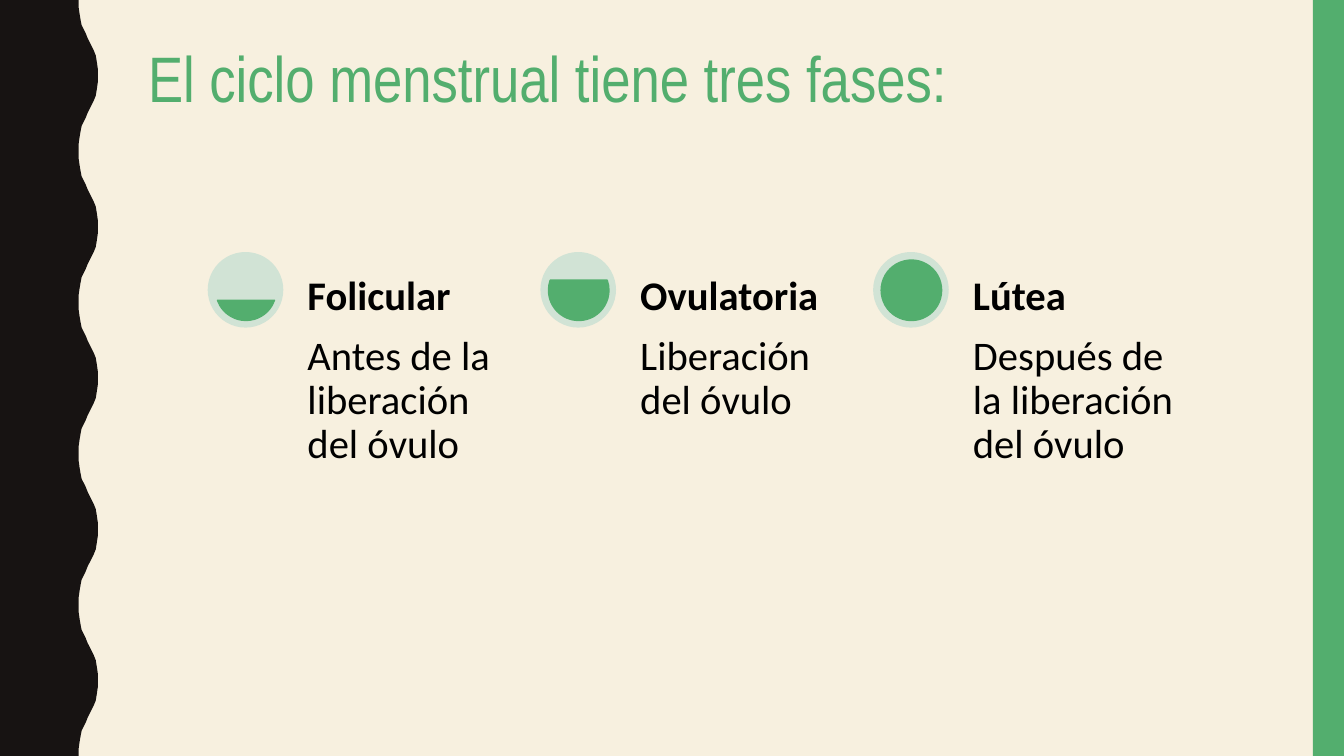
from pptx import Presentation
from pptx.dml.color import RGBColor
from pptx.enum.shapes import MSO_SHAPE as Shape
from pptx.enum.text import MSO_ANCHOR as Anchor
from pptx.util import Inches, Pt

GREEN, PALE, DARK, CREAM = "53AE6E", "D1E3D5", "171312", "F7F0DF"


def paint(item, color):
    item.fill.solid()
    item.fill.fore_color.rgb = RGBColor.from_string(color)
    item.line.fill.background()
    item.shadow.inherit = False


def write(box, text, size, font, color, inset, anchor=Anchor.TOP, bold=False):
    frame = slide.shapes.add_textbox(*map(Inches, box)).text_frame
    frame.word_wrap = True
    frame.vertical_anchor = anchor
    frame.margin_left = frame.margin_right = Inches(inset[0])
    frame.margin_top = frame.margin_bottom = Inches(inset[1])
    para = frame.paragraphs[0]
    para.line_spacing = 0.9
    run = para.add_run()
    run.text = text
    run.font.size = Pt(size)
    run.font.name = font
    run.font.bold = bold
    run.font.color.rgb = RGBColor.from_string(color)


deck = Presentation()
deck.slide_width, deck.slide_height = Inches(13.33), Inches(7.5)
slide = deck.slides.add_slide(deck.slide_layouts[6])
back = slide.background.fill
back.solid()
back.fore_color.rgb = RGBColor.from_string(CREAM)

half = [(0.78, 0), (0.78, 0.07), (0.79, 0.14), (0.8, 0.2), (0.81, 0.25),
        (0.83, 0.29), (0.85, 0.33), (0.87, 0.38), (0.89, 0.42), (0.91, 0.46),
        (0.93, 0.5), (0.95, 0.55), (0.96, 0.61), (0.97, 0.68), (0.97, 0.75)]
wave = half + [(x, 1.5 - y) for x, y in half[-2::-1]]
edge = [(x, y + 1.5 * i) for i in range(5) for x, y in wave]
path = [(Inches(x), Inches(y)) for x, y in edge + [(0, 7.5)]]
build = slide.shapes.build_freeform(0, 0)
build.add_line_segments(path, close=True)
paint(build.convert_to_shape(), DARK)

band = slide.shapes.add_shape(
    Shape.RECTANGLE, Inches(13.02), 0, Inches(0.31), Inches(7.5))
paint(band, GREEN)

write((1.37, 0.42, 11.13, 1.63), "El ciclo menstrual tiene tres fases:",
      45.9, "Arial Narrow", GREEN, (0.1, 0.05))

phases = [
    ("Folicular", "Antes de la liberación del óvulo", (11.68, 96.32)),
    ("Ovulatoria", "Liberación del óvulo", (204.32, 119.68)),
    ("Lútea", "Después de la liberación del óvulo", (162, 162)),
]
for i, (name, text, angles) in enumerate(phases):
    left = 2.06 + 3.3 * i
    disc = slide.shapes.add_shape(
        Shape.OVAL, Inches(left), Inches(2.5), Inches(0.75), Inches(0.75))
    paint(disc, PALE)
    level = slide.shapes.add_shape(
        Shape.CHORD, Inches(left + 0.08), Inches(2.58), Inches(0.6), Inches(0.6))
    level.adjustments[0], level.adjustments[1] = angles
    paint(level, GREEN)
    level.line.color.rgb = RGBColor.from_string(GREEN)
    level.line.width = Pt(1)
    write((left + 0.91, 3.25, 2.23, 3.18), text,
          29, "Calibri", "000000", (0.08, 0.08))
    write((left + 0.91, 2.5, 2.23, 0.75), name,
          29, "Calibri", "000000", (0.08, 0.08), Anchor.BOTTOM, True)

deck.save("out.pptx")
